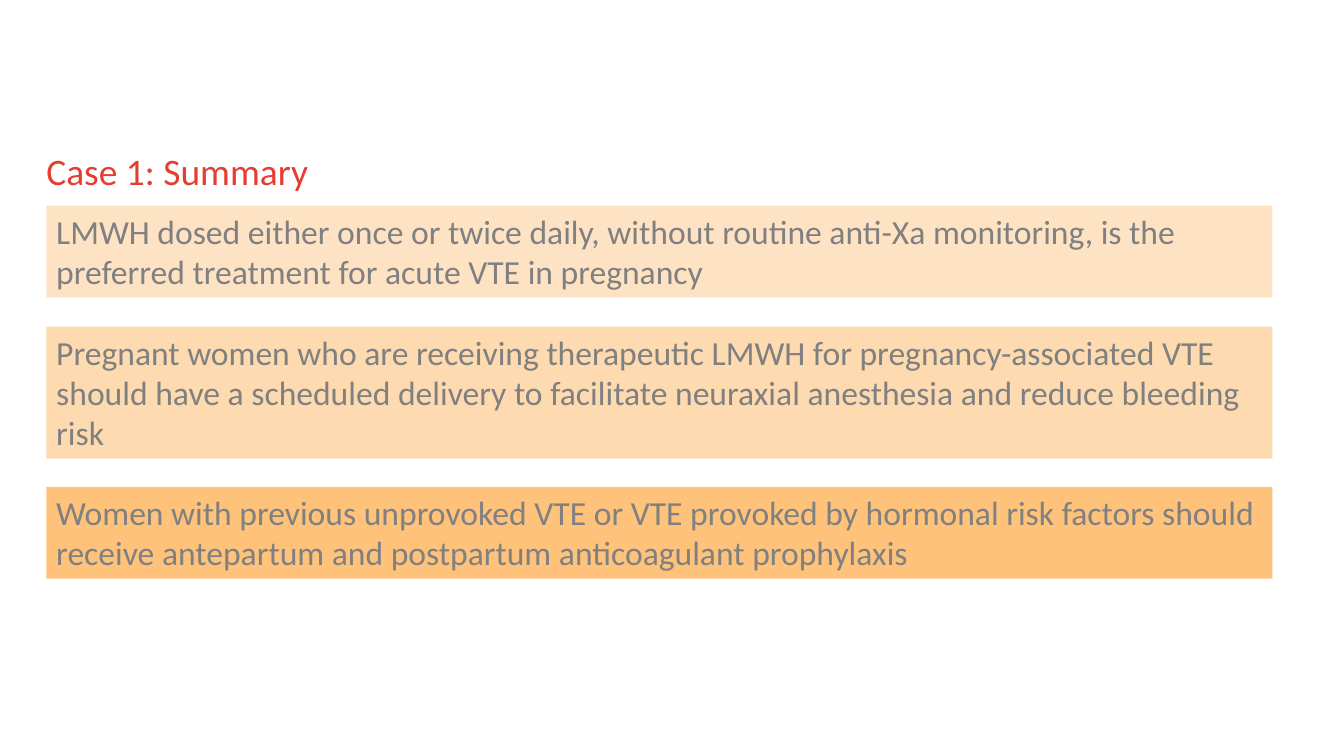
from pptx import Presentation
from pptx.dml.color import RGBColor
from pptx.enum.shapes import MSO_SHAPE
from pptx.enum.text import MSO_ANCHOR, MSO_AUTO_SIZE, PP_ALIGN
from pptx.util import Inches, Pt

LEFT = 0.46
SUMMARY_POINTS = [
    (2.04, 0.91, "FEE2C4",
     "LMWH dosed either once or twice daily, without routine anti-Xa monitoring, "
     "is the preferred treatment for acute VTE in pregnancy"),
    (3.24, 1.31, "FDDAAF",
     "Pregnant women who are receiving therapeutic LMWH for pregnancy-associated VTE "
     "should have a scheduled delivery to facilitate neuraxial anesthesia and reduce "
     "bleeding risk"),
    (4.83, 0.91, "FEC27B",
     "Women with previous unprovoked VTE or VTE provoked by hormonal risk factors "
     "should receive antepartum and postpartum anticoagulant prophylaxis"),
]


def rgb(value):
    return RGBColor.from_string(value)


def write_text(tf, text, size, color):
    tf.word_wrap = True
    p = tf.paragraphs[0]
    p.text = text
    p.alignment = PP_ALIGN.LEFT
    p.font.name = "Calibri"
    p.font.size = Pt(size)
    p.font.color.rgb = rgb(color)


def set_title(s, text):
    sp = s.shapes.title
    sp.left, sp.top = Inches(LEFT), Inches(1.47)
    sp.width, sp.height = Inches(12), Inches(0.78)
    tf = sp.text_frame
    tf.margin_left = tf.margin_top = tf.margin_right = tf.margin_bottom = 0
    tf.vertical_anchor = MSO_ANCHOR.TOP
    tf.auto_size = MSO_AUTO_SIZE.NONE
    write_text(tf, text, 26.7, "E53E31")


def add_point(s, top, height, fill, text):
    sp = s.shapes.add_shape(MSO_SHAPE.RECTANGLE, Inches(LEFT), Inches(top),
                            Inches(12.16), Inches(height))
    sp.shadow.inherit = False
    sp.fill.solid()
    sp.fill.fore_color.rgb = rgb(fill)
    sp.line.fill.background()
    tf = sp.text_frame
    tf.vertical_anchor = MSO_ANCHOR.TOP
    tf.auto_size = MSO_AUTO_SIZE.SHAPE_TO_FIT_TEXT
    write_text(tf, text, 24, "808080")


def main():
    prs = Presentation()
    prs.slide_width, prs.slide_height = Inches(13.33), Inches(7.5)
    s = prs.slides.add_slide(prs.slide_layouts.get_by_name("Title Only"))
    set_title(s, "Case 1: Summary")
    for point in SUMMARY_POINTS:
        add_point(s, *point)
    prs.save("out.pptx")


if __name__ == "__main__":
    main()
